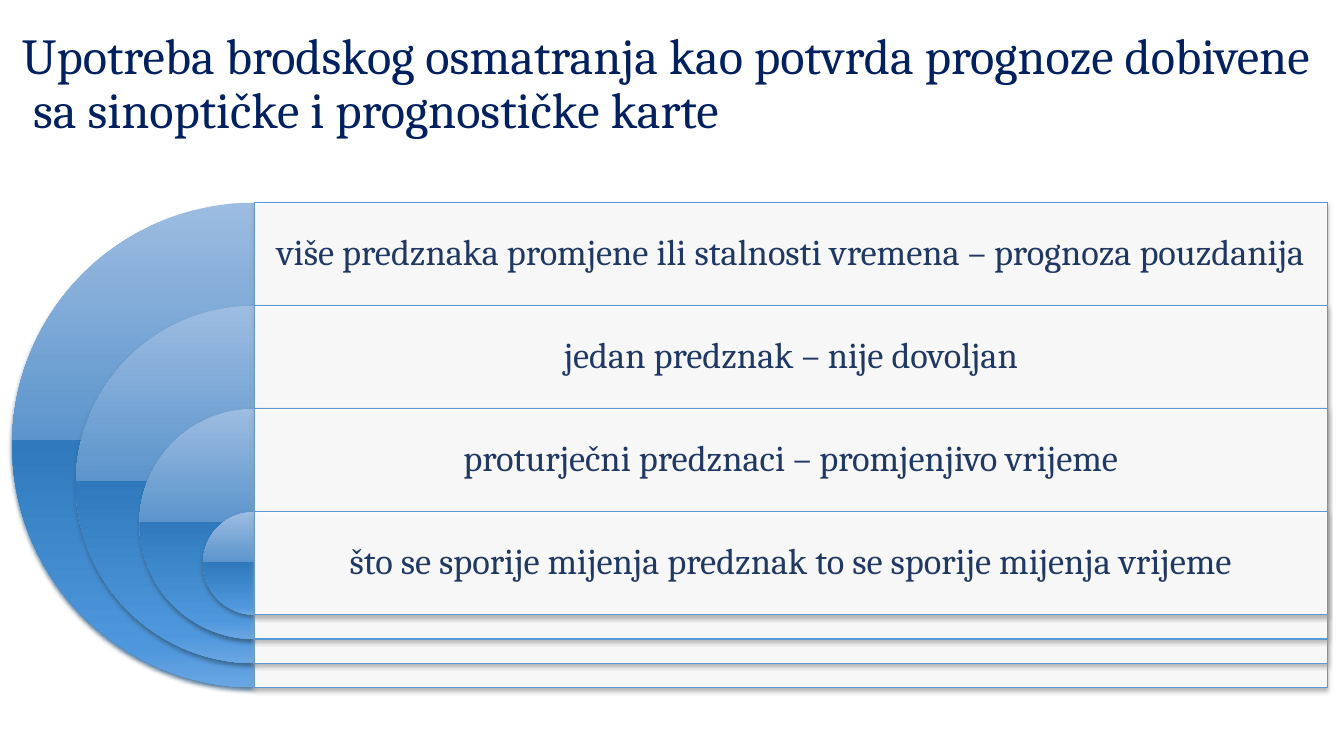
from dataclasses import dataclass

from lxml.etree import SubElement
from pptx import Presentation
from pptx.dml.color import RGBColor
from pptx.enum.shapes import MSO_SHAPE
from pptx.enum.text import MSO_ANCHOR, PP_ALIGN
from pptx.oxml.ns import qn
from pptx.util import Inches, Pt


@dataclass(frozen=True)
class Theme:
    font: str = "Cambria"
    title_size: int = 36
    row_size: int = 26
    title_color: str = "002060"
    row_color: str = "203864"
    panel_fill: str = "FFFFFF"
    panel_opacity: int = 90
    panel_line: str = "5B9BD5"
    panel_shadow: str = "9D9D9D"
    disc_shadow: str = "386084"
    disc_stops: tuple = ((0, "9DBCE1"), (49, "5C95CC"), (49, "2F79BC"),
                         (92, "4E97DC"), (100, "6BA6E4"))


THEME = Theme()
TITLE = ("Upotreba brodskog osmatranja kao potvrda prognoze dobivene\v"
         " sa sinoptičke i prognostičke karte")
SIGNS = (
    "više predznaka promjene ili stalnosti vremena – prognoza pouzdanija",
    "jedan predznak – nije dovoljan",
    "proturječni predznaci – promjenjivo vrijeme",
    "što se sporije mijenja predznak to se sporije mijenja vrijeme",
)
ROW_SHARE = 0.2125  # row height, and smallest disc, as a share of the diagram


def add_color(parent, color, opacity=100):
    node = SubElement(parent, qn("a:srgbClr"), val=color)
    if opacity < 100:
        SubElement(node, qn("a:alpha"), val=str(opacity * 1000))


def add_shadow(shape, color):
    """Give the shape a soft shadow straight below it."""
    shape.shadow.inherit = False
    effects = shape._element.spPr.find(qn("a:effectLst"))
    shadow = SubElement(effects, qn("a:outerShdw"), blurRad=str(Pt(3.1)),
                        dist=str(Pt(2)), dir="5400000", rotWithShape="0")
    add_color(shadow, color, 83)


def add_text(slide, box, text, size, color, align, inset):
    frame = slide.shapes.add_textbox(*map(Inches, box)).text_frame
    frame.word_wrap = True
    frame.vertical_anchor = MSO_ANCHOR.MIDDLE
    frame.margin_left = frame.margin_right = Inches(inset[0])
    frame.margin_top = frame.margin_bottom = Inches(inset[1])
    frame.text = text
    paragraph = frame.paragraphs[0]
    paragraph.alignment = align
    paragraph.line_spacing = 0.9
    for run in paragraph.runs:
        run.font.name = THEME.font
        run.font.size = Pt(size)
        run.font.color.rgb = RGBColor.from_string(color)


def add_half_disc(slide, box):
    disc = slide.shapes.add_shape(MSO_SHAPE.PIE, *map(Inches, box))
    disc.adjustments[0], disc.adjustments[1] = 54, 162
    disc.fill.gradient()
    disc.fill.gradient_angle = 270
    stops = disc._element.spPr.find(qn("a:gradFill")).find(qn("a:gsLst"))
    for stop in list(stops):
        stops.remove(stop)
    for position, color in THEME.disc_stops:
        add_color(SubElement(stops, qn("a:gs"), pos=str(position * 1000)), color)
    disc.line.fill.background()
    add_shadow(disc, THEME.disc_shadow)


def add_panel(slide, box):
    panel = slide.shapes.add_shape(MSO_SHAPE.RECTANGLE, *map(Inches, box))
    panel.fill.solid()
    panel.fill.fore_color.rgb = RGBColor.from_string(THEME.panel_fill)
    fill_color = panel._element.spPr.find(qn("a:solidFill"))[0]
    SubElement(fill_color, qn("a:alpha"), val=str(THEME.panel_opacity * 1000))
    panel.line.color.rgb = RGBColor.from_string(THEME.panel_line)
    panel.line.width = Pt(0.9)
    add_shadow(panel, THEME.panel_shadow)


def add_target_list(slide, box, signs):
    """Nest shrinking half discs, each with a panel and its text to the right."""
    left, top, width, height = box
    axis = left + height / 2
    panel_width = width - height / 2
    row = height * ROW_SHARE
    shrink = (height - row) / (len(signs) - 1)
    for index, sign in enumerate(signs):
        size = height - index * shrink
        row_top = top + index * row
        add_half_disc(slide, (axis - size / 2, row_top, size, size))
        add_panel(slide, (axis, row_top, panel_width, size))
        add_text(slide, (axis, row_top, panel_width, row), sign, THEME.row_size,
                 THEME.row_color, PP_ALIGN.CENTER, (0.11, 0.11))


def main():
    presentation = Presentation()
    presentation.slide_width = Inches(13.33)
    presentation.slide_height = Inches(7.5)
    slide = presentation.slides.add_slide(presentation.slide_layouts[6])
    add_text(slide, (0.12, 0.15, 13.04, 1.39), TITLE, THEME.title_size,
             THEME.title_color, PP_ALIGN.LEFT, (0.1, 0.05))
    add_target_list(slide, (0.12, 2.01, 13.05, 4.81), SIGNS)
    presentation.save("out.pptx")


if __name__ == "__main__":
    main()
